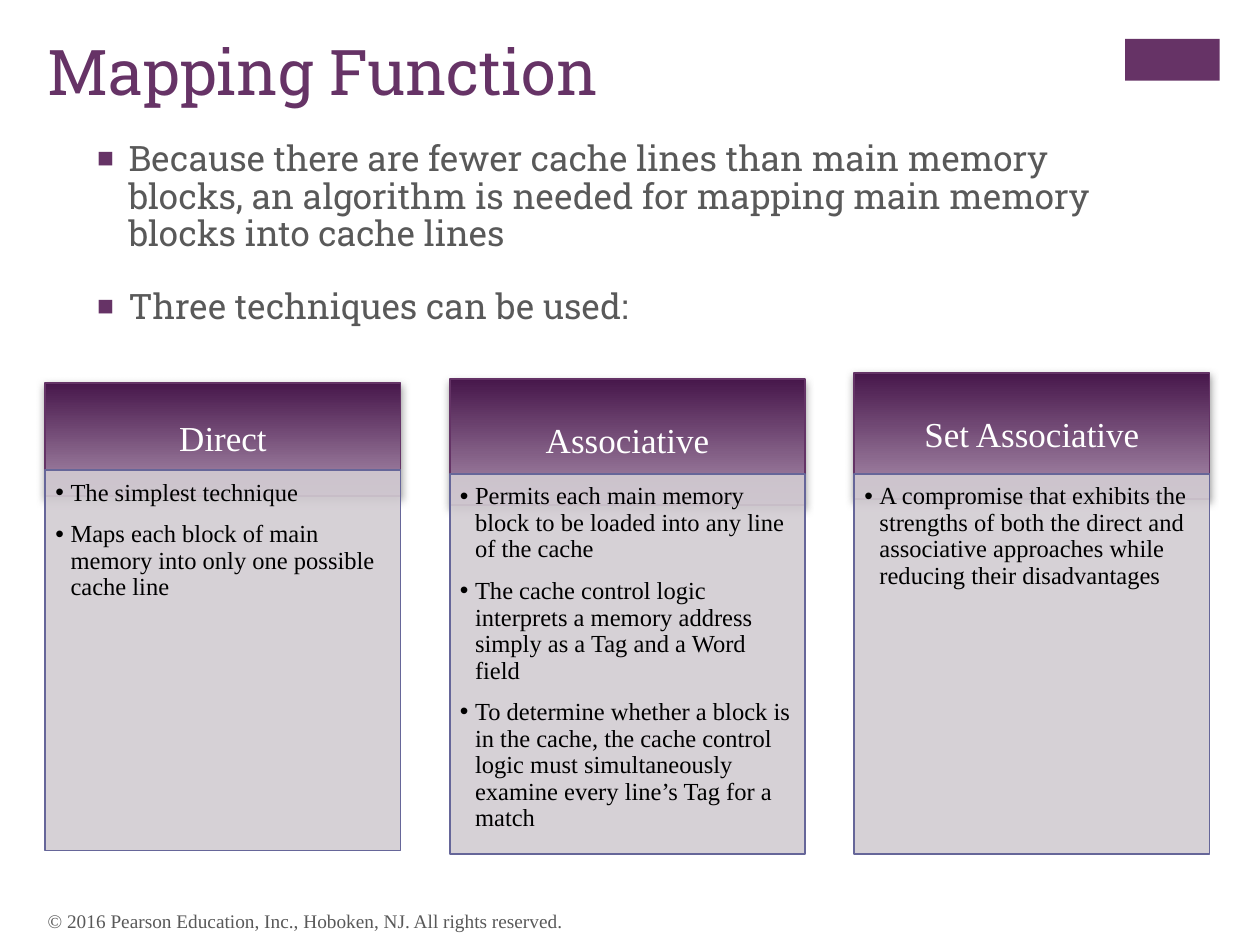
from lxml.etree import SubElement
from pptx import Presentation
from pptx.dml.color import RGBColor
from pptx.enum.shapes import MSO_SHAPE as Shape
from pptx.enum.text import MSO_ANCHOR as Anchor, MSO_AUTO_SIZE as AutoSize, PP_ALIGN as Align
from pptx.oxml.ns import qn
from pptx.util import Inches, Pt

SLAB, SERIF = "Roboto Slab", "Times New Roman"
PURPLE, GREY, BLACK, WHITE = "663366", "595959", "000000", "FFFFFF"

POINTS = [
    "Because there are fewer cache lines than main memory blocks, "
    "an algorithm is needed for mapping main memory blocks into cache lines",
    "Three techniques can be used:",
]
TECHNIQUES = [
    ("Direct", 3.04, 0.9, 3.73, [
        "The simplest technique",
        "Maps each block of main memory into only one possible cache line",
    ]),
    ("Associative", 3.01, 1, 3.76, [
        "Permits each main memory block to be loaded into any line of the cache",
        "The cache control logic interprets a memory address simply as a Tag and a Word field",
        "To determine whether a block is in the cache, the cache control logic must "
        "simultaneously examine every line’s Tag for a match",
    ]),
    ("Set Associative", 2.96, 1, 3.76, [
        "A compromise that exhibits the strengths of both the direct and associative "
        "approaches while reducing their disadvantages",
    ]),
]


def rgb(code):
    """Turn a hex string into a colour."""
    return RGBColor.from_string(code)


def place(part, box):
    """Move a part to a box of left, top, width and height in inches."""
    part.left, part.top, part.width, part.height = map(Inches, box)


def prepare(frame, insets=(0.1, 0.05, 0.1, 0.05), anchor=Anchor.TOP):
    """Set the wrapping, insets and anchor of a text frame."""
    frame.word_wrap = True
    frame.auto_size = AutoSize.NONE
    frame.vertical_anchor = anchor
    (frame.margin_left, frame.margin_top,
     frame.margin_right, frame.margin_bottom) = map(Inches, insets)


def add_bullet(paragraph, mark, color, indent, percent=100):
    """Give a paragraph a hanging bullet."""
    props = paragraph._p.get_or_add_pPr()
    props.set("marL", str(Inches(indent)))
    props.set("indent", str(-Inches(indent)))
    SubElement(SubElement(props, qn("a:buClr")), qn("a:srgbClr"), val=color)
    SubElement(props, qn("a:buSzPct"), val=str(percent * 1000))
    SubElement(props, qn("a:buFont"), typeface="Arial")
    SubElement(props, qn("a:buChar"), char=mark)


def write(frame, lines, font, size, color, align=Align.LEFT, spacing=1.0, gap=0, bullet=None):
    """Write one paragraph per line, with a gap between paragraphs."""
    for index, line in enumerate(lines):
        paragraph = frame.add_paragraph() if index else frame.paragraphs[0]
        if bullet:
            add_bullet(paragraph, *bullet)
        paragraph.alignment = align
        paragraph.line_spacing = spacing
        paragraph.space_before = Pt(gap if index else 0)
        run = paragraph.add_run()
        run.text = line
        run.font.name, run.font.size = font, Pt(size)
        run.font.color.rgb = rgb(color)


def add_panel(slide, box, fill=None, line=None):
    """Add a flat rectangle with an optional solid fill and outline."""
    panel = slide.shapes.add_shape(Shape.RECTANGLE, *map(Inches, box))
    panel.shadow.inherit = False
    if fill:
        panel.fill.solid()
        panel.fill.fore_color.rgb = rgb(fill)
    if line:
        panel.line.color.rgb = rgb(line)
        panel.line.width = Pt(1)
    else:
        panel.line.fill.background()
    return panel


def add_heading(slide, box, name):
    """Add the shaded heading of a technique."""
    heading = add_panel(slide, box, line="643366")
    heading.fill.gradient()
    heading.fill.gradient_angle = 270
    for stop, color in zip(heading.fill.gradient_stops, ("47174B", "AC90AE")):
        stop.color.rgb = rgb(color)
    effects = heading._element.spPr.find(qn("a:effectLst"))
    shadow = SubElement(effects, qn("a:outerShdw"), blurRad=str(Pt(5)), dist=str(Pt(2)),
                        dir="5400000", rotWithShape="0")
    tint = SubElement(shadow, qn("a:srgbClr"), val="808080")
    SubElement(tint, qn("a:alpha"), val="75000")
    prepare(heading.text_frame, (0.16, 0.09, 0.16, 0.09), Anchor.MIDDLE)
    write(heading.text_frame, [name], SERIF, 20, WHITE, Align.CENTER, 0.9)


def add_details(slide, box, details):
    """Add the translucent panel that describes a technique."""
    panel = add_panel(slide, box, "D2CCD2", "666699")
    tint = panel._element.spPr.find(qn("a:solidFill")).find(qn("a:srgbClr"))
    SubElement(tint, qn("a:alpha"), val="90000")
    prepare(panel.text_frame, (0.08, 0.08, 0.11, 0.12))
    write(panel.text_frame, details, SERIF, 14, BLACK, spacing=0.9, gap=8.7,
          bullet=("•", BLACK, 0.12))


def add_techniques(slide, left, width, pitch):
    """Lay the techniques out in equal columns."""
    for index, (name, top, height, details_top, details) in enumerate(TECHNIQUES):
        x = left + index * pitch
        add_heading(slide, (x, top, width, height), name)
        add_details(slide, (x, details_top, width, 3.02), details)


def add_title(slide, box):
    """Fill the title placeholder."""
    title = slide.shapes.title
    place(title, box)
    prepare(title.text_frame)
    write(title.text_frame, ["Mapping Function"], SLAB, 36, PURPLE)


def add_points(slide, box):
    """Fill the body placeholder with the main points."""
    body = slide.placeholders[1]
    place(body, box)
    prepare(body.text_frame)
    write(body.text_frame, POINTS, SLAB, 20, GREY, spacing=0.9, gap=20,
          bullet=("■", PURPLE, 0.25, 80))


def add_copyright(slide, box):
    """Add the copyright line at the foot."""
    frame = slide.shapes.add_textbox(*map(Inches, box)).text_frame
    prepare(frame, anchor=Anchor.MIDDLE)
    write(frame, ["© 2016 Pearson Education, Inc., Hoboken, NJ. All rights reserved."],
          SERIF, 11, GREY)


def main():
    """Build the slide and save it."""
    deck = Presentation()
    deck.slide_width, deck.slide_height = Inches(10), Inches(7.5)
    slide = deck.slides.add_slide(deck.slide_layouts[1])
    add_panel(slide, (8.93, 0.31, 0.75, 0.33), PURPLE)
    add_title(slide, (0.28, 0.21, 8.26, 1.05))
    add_points(slide, (0.67, 1.07, 8.26, 2.08))
    add_techniques(slide, 0.36, 2.82, 3.21)
    add_copyright(slide, (0.28, 7.11, 6.7, 0.39))
    deck.save("out.pptx")


if __name__ == "__main__":
    main()
